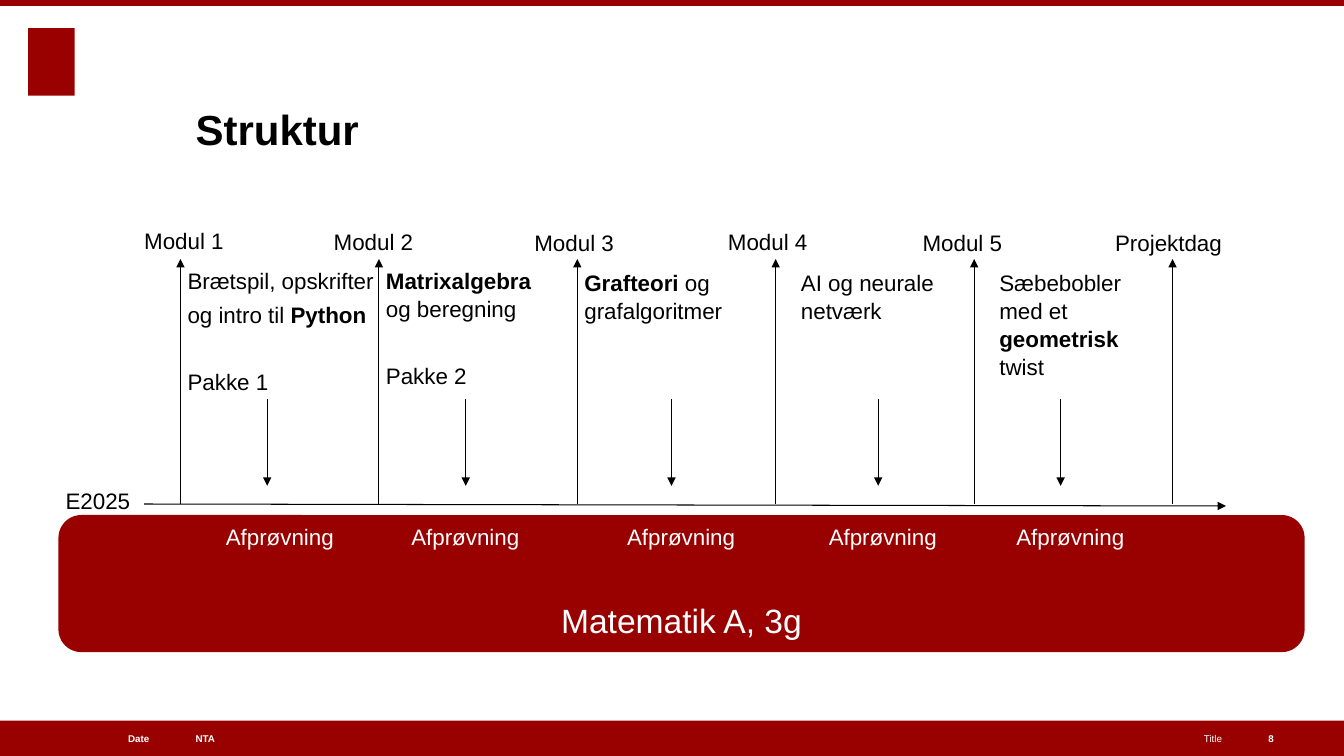
from pptx import Presentation
from pptx.dml.color import RGBColor
from pptx.enum.shapes import MSO_CONNECTOR, MSO_SHAPE
from pptx.enum.text import MSO_ANCHOR, PP_ALIGN
from pptx.oxml.ns import qn
from pptx.util import Inches, Pt
from lxml import etree

RECT, ROUNDED = MSO_SHAPE.RECTANGLE, MSO_SHAPE.ROUNDED_RECTANGLE
STRAIGHT = MSO_CONNECTOR.STRAIGHT
TOP, MIDDLE, BOTTOM = MSO_ANCHOR.TOP, MSO_ANCHOR.MIDDLE, MSO_ANCHOR.BOTTOM
LEFT, CENTER, RIGHT = PP_ALIGN.LEFT, PP_ALIGN.CENTER, PP_ALIGN.RIGHT

COLORS = {"red": "990000", "black": "000000", "white": "FFFFFF"}
FONT = "Arial"
BODY_SIZE, PARAGRAPH_GAP, PACKAGE_GAP, LINE_SPACING = 16, 4.3, 28, 1.04

# label, left, top, width
MILESTONES = [
    ("Modul 1", 1.43, 2.24, 1.02),
    ("Modul 2", 3.31, 2.25, 1.02),
    ("Modul 3", 5.3, 2.26, 1.02),
    ("Modul 4", 7.22, 2.25, 1.02),
    ("Modul 5", 9.15, 2.26, 1.02),
    ("Projektdag", 11.06, 2.26, 1.54),
]
# paragraphs of (text, bold) runs, package, gap after milestone, top, width, height
TOPICS = [
    ([[("Brætspil, opskrifter", False)], [("og intro til ", False), ("Python", True)]],
     "Pakke 1", 0.07, 2.64, 2.19, 1.9),
    ([[("Matrixalgebra", True), (" og beregning", False)]],
     "Pakke 2", 0.07, 2.64, 1.6, 1.84),
    ([[("Grafteori", True), (" og ", False), ("\n", False), ("grafalgoritmer", False)]],
     None, 0.07, 2.66, 1.68, 1.19),
    ([[("AI og neurale netværk", False)]], None, 0.25, 2.66, 1.49, 1.19),
    ([[("Sæbebobler med et ", False), ("geometrisk", True), (" twist", False)]],
     None, 0.25, 2.66, 1.49, 1.4),
]
# arrow x, label left
TRIALS = [(2.65, 2.24), (4.62, 4.08), (6.66, 6.22), (8.71, 8.22), (10.52, 10.08)]
TRIAL_LABEL = "Afprøvning"
# text, left, width, alignment, bold
FOOTER = [
    ("NTA", 1.94, 3.72, LEFT, True),
    ("Date", 0.27, 1.21, RIGHT, True),
    ("Title", 6.11, 6.01, RIGHT, False),
    ("8", 12.58, 0.47, LEFT, True),
]
FIRST_MILESTONE, MILESTONE_STEP = 1.79, 1.968
AXIS_Y, MILESTONE_HEIGHT = 5, 2.43
FOOTER_TOP, FOOTER_HEIGHT = 7.15, 0.35


def rgb(name):
    return RGBColor.from_string(COLORS[name])


def style(paragraph, size, color, bold=None, align=LEFT, gap=0):
    font = paragraph.font
    font.name, font.size, font.bold = FONT, Pt(size), bold
    font.color.rgb = rgb(color)
    paragraph.alignment = align
    paragraph.space_before = Pt(gap)


def add_block(slide, kind, left, top, width, height):
    block = slide.shapes.add_shape(kind, *map(Inches, (left, top, width, height)))
    block.shadow.inherit = False
    block.fill.solid()
    block.fill.fore_color.rgb = rgb("red")
    block.line.fill.background()
    return block


def add_frame(slide, left, top, width, height, anchor=TOP):
    frame = slide.shapes.add_textbox(*map(Inches, (left, top, width, height))).text_frame
    frame.word_wrap = True
    frame.vertical_anchor = anchor
    frame.margin_left = frame.margin_right = frame.margin_top = frame.margin_bottom = 0
    return frame


def add_label(slide, text, left, top, width, height=0.27, color="black"):
    paragraph = add_frame(slide, left, top, width, height).paragraphs[0]
    paragraph.text = text
    style(paragraph, BODY_SIZE, color, gap=PARAGRAPH_GAP)
    paragraph.line_spacing = LINE_SPACING


def add_arrow(slide, x1, y1, x2, y2):
    arrow = slide.shapes.add_connector(STRAIGHT, *map(Inches, (x1, y1, x2, y2)))
    arrow.line.color.rgb = rgb("black")
    arrow.line.width = Pt(0.75)
    etree.SubElement(arrow.line._get_or_add_ln(), qn("a:tailEnd"), type="triangle")
    etree.SubElement(arrow._element.spPr, qn("a:effectLst"))


def add_topic(slide, milestone_x, paragraphs, package, gap, top, width, height):
    frame = add_frame(slide, milestone_x + gap, top, width, height)
    lines = [(runs, PARAGRAPH_GAP) for runs in paragraphs]
    if package:
        lines.append(([(package, False)], PACKAGE_GAP))
    for index, (runs, space) in enumerate(lines):
        paragraph = frame.add_paragraph() if index else frame.paragraphs[0]
        style(paragraph, BODY_SIZE, "black", gap=space)
        paragraph.line_spacing = LINE_SPACING
        for text, bold in runs:
            if text == "\n":
                paragraph.add_line_break()
                continue
            run = paragraph.add_run()
            run.text = text
            run.font.bold = bold


def add_page_frame(slide):
    add_block(slide, RECT, 0.28, 0.28, 0.46, 0.67)
    add_block(slide, RECT, 0, FOOTER_TOP, 13.33, FOOTER_HEIGHT)
    add_block(slide, RECT, 0, 0, 13.33, 0.06)
    for text, left, width, align, bold in FOOTER:
        note = add_frame(slide, left, FOOTER_TOP, width, FOOTER_HEIGHT, MIDDLE).paragraphs[0]
        note.text = text
        style(note, 7, "white", bold, align)
    title = add_frame(slide, 1.94, 0.47, 10.18, 1.06, BOTTOM).paragraphs[0]
    title.text = "Struktur"
    style(title, 30, "black", True)


def add_timeline(slide):
    course = add_block(slide, ROUNDED, 0.58, 5.11, 12.36, 1.36).text_frame
    course.vertical_anchor = BOTTOM
    course.paragraphs[0].text = "Matematik A, 3g"
    style(course.paragraphs[0], 24, "white", align=CENTER, gap=PARAGRAPH_GAP)

    add_arrow(slide, 1.43, AXIS_Y, 12.16, AXIS_Y + 0.02)
    add_label(slide, "E2025", 0.65, 4.82, 1.49, 0.92)
    milestone_xs = [FIRST_MILESTONE + i * MILESTONE_STEP for i in range(len(MILESTONES))]
    for x, milestone in zip(milestone_xs, MILESTONES):
        add_arrow(slide, x, AXIS_Y, x, AXIS_Y - MILESTONE_HEIGHT)
        add_label(slide, *milestone)
    for x, topic in zip(milestone_xs, TOPICS):
        add_topic(slide, x, *topic)
    for x, label_left in TRIALS:
        add_arrow(slide, x, 3.96, x, 4.82)
        add_label(slide, TRIAL_LABEL, label_left, 5.18, 1.34, color="white")


def main():
    """Build the course structure slide."""
    deck = Presentation()
    deck.slide_width, deck.slide_height = Inches(13.33), Inches(7.5)
    slide = deck.slides.add_slide(deck.slide_layouts[6])
    add_page_frame(slide)
    add_timeline(slide)
    deck.save("out.pptx")


if __name__ == "__main__":
    main()
